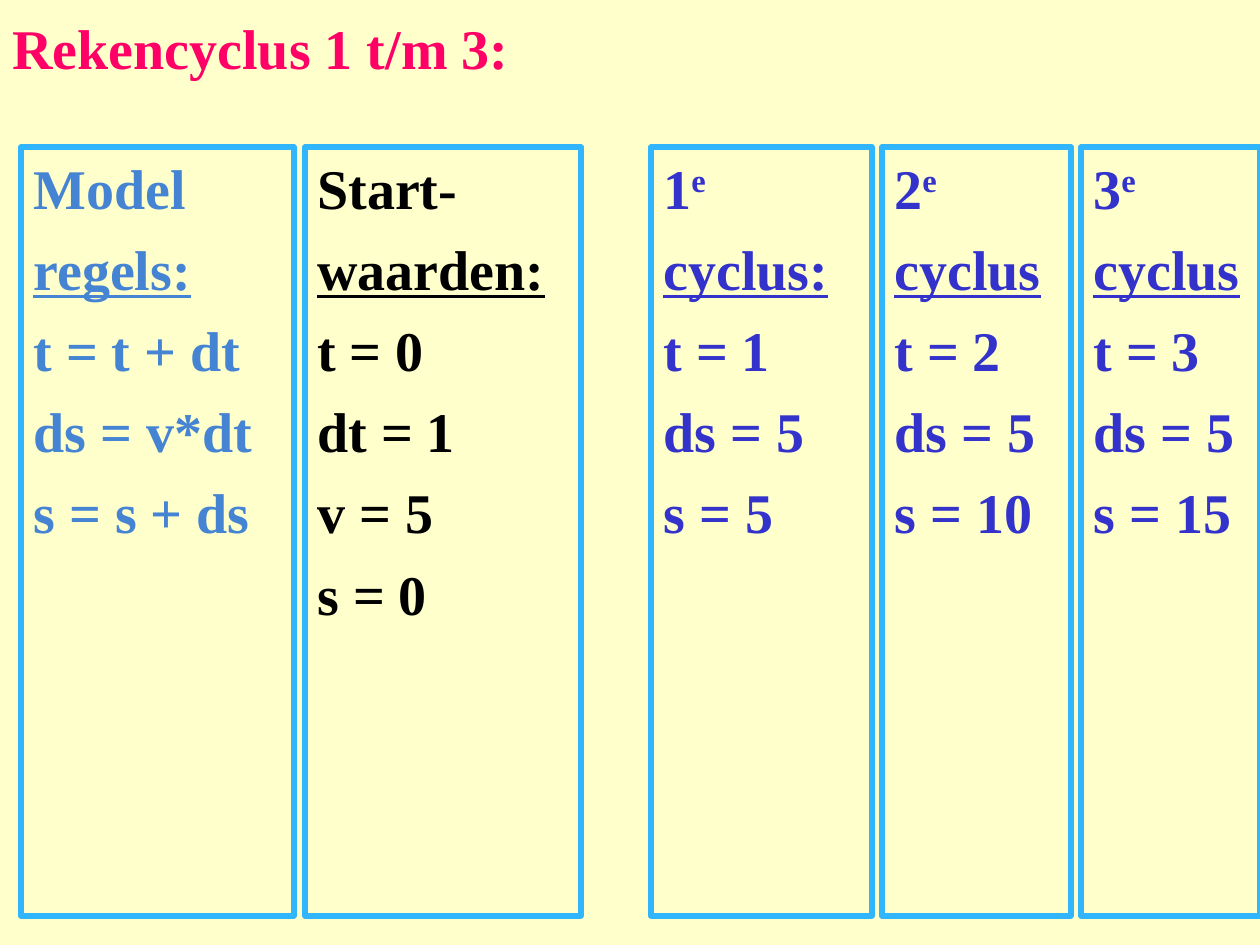
from dataclasses import dataclass

from pptx import Presentation
from pptx.dml.color import RGBColor
from pptx.enum.shapes import MSO_SHAPE
from pptx.enum.text import MSO_ANCHOR, PP_ALIGN
from pptx.util import Emu, Pt

RECTANGLE = MSO_SHAPE.RECTANGLE
TOP, MIDDLE = MSO_ANCHOR.TOP, MSO_ANCHOR.MIDDLE
LEFT = PP_ALIGN.LEFT


@dataclass(frozen=True)
class Theme:
    background: str = "FFFFCC"
    title: str = "FF0066"
    border: str = "31B6FD"
    rules: str = "4584D3"
    start: str = "000000"
    cycle: str = "3333CC"
    font: str = "Times New Roman"
    size: int = 32
    border_width: int = 3
    space_before: int = 8


THEME = Theme()
PAGE_WIDTH, PAGE_HEIGHT = 1260, 945
TITLE_HEIGHT = 94
COLUMN_TOP, COLUMN_HEIGHT = 147, 769

TITLE = "Rekencyclus 1 t/m 3:"
# left, width, colour, first heading line, superscript, underlined line, values
COLUMNS = [
    (21, 273, THEME.rules, "Model", "", "regels:",
     ["t = t + dt", "ds = v*dt", "s = s + ds"]),
    (305, 276, THEME.start, "Start-", "", "waarden:",
     ["t = 0", "dt = 1", "v = 5", "s = 0"]),
    (651, 221, THEME.cycle, "1", "e", "cyclus:", ["t = 1", "ds = 5", "s = 5"]),
    (882, 189, THEME.cycle, "2", "e", "cyclus", ["t = 2", "ds = 5", "s = 10"]),
    (1081, 179, THEME.cycle, "3", "e", "cyclus", ["t = 3", "ds = 5", "s = 15"]),
]


def px(length):
    return Emu(round(length * 914400 / 126))


def rgb(value):
    return RGBColor.from_string(value)


def add_span(para, text, color, underline=False, superscript=False):
    span = para.add_run()
    span.text = text
    formats = {"name": THEME.font, "size": Pt(THEME.size), "bold": True,
               "underline": underline}
    for name, value in formats.items():
        setattr(span.font, name, value)
    span.font.color.rgb = rgb(color)
    if superscript:
        span.font._element.set("baseline", "30000")


def set_frame(box, anchor):
    frame = box.text_frame
    frame.word_wrap = True
    frame.vertical_anchor = anchor
    return frame


def add_title(page):
    box = page.shapes.add_textbox(0, 0, px(PAGE_WIDTH), px(TITLE_HEIGHT))
    add_span(set_frame(box, MIDDLE).paragraphs[0], TITLE, THEME.title)


def add_column(page, left, width, color, heading, superscript, label, values):
    box = page.shapes.add_shape(RECTANGLE, px(left), px(COLUMN_TOP),
                                px(width), px(COLUMN_HEIGHT))
    box.shadow.inherit = False
    box.fill.background()
    box.line.color.rgb = rgb(THEME.border)
    box.line.width = Pt(THEME.border_width)
    frame = set_frame(box, TOP)
    for index, text in enumerate([heading, label, *values]):
        para = frame.add_paragraph() if index else frame.paragraphs[0]
        para.alignment = LEFT
        para.space_before = Pt(THEME.space_before)
        add_span(para, text, color, underline=index == 1)
        if index == 0 and superscript:
            add_span(para, superscript, color, superscript=True)


def main():
    deck = Presentation()
    deck.slide_width, deck.slide_height = px(PAGE_WIDTH), px(PAGE_HEIGHT)
    page = deck.slides.add_slide(deck.slide_layouts[6])
    page.background.fill.solid()
    page.background.fill.fore_color.rgb = rgb(THEME.background)
    add_title(page)
    for column in COLUMNS:
        add_column(page, *column)
    deck.save("out.pptx")


if __name__ == "__main__":
    main()
